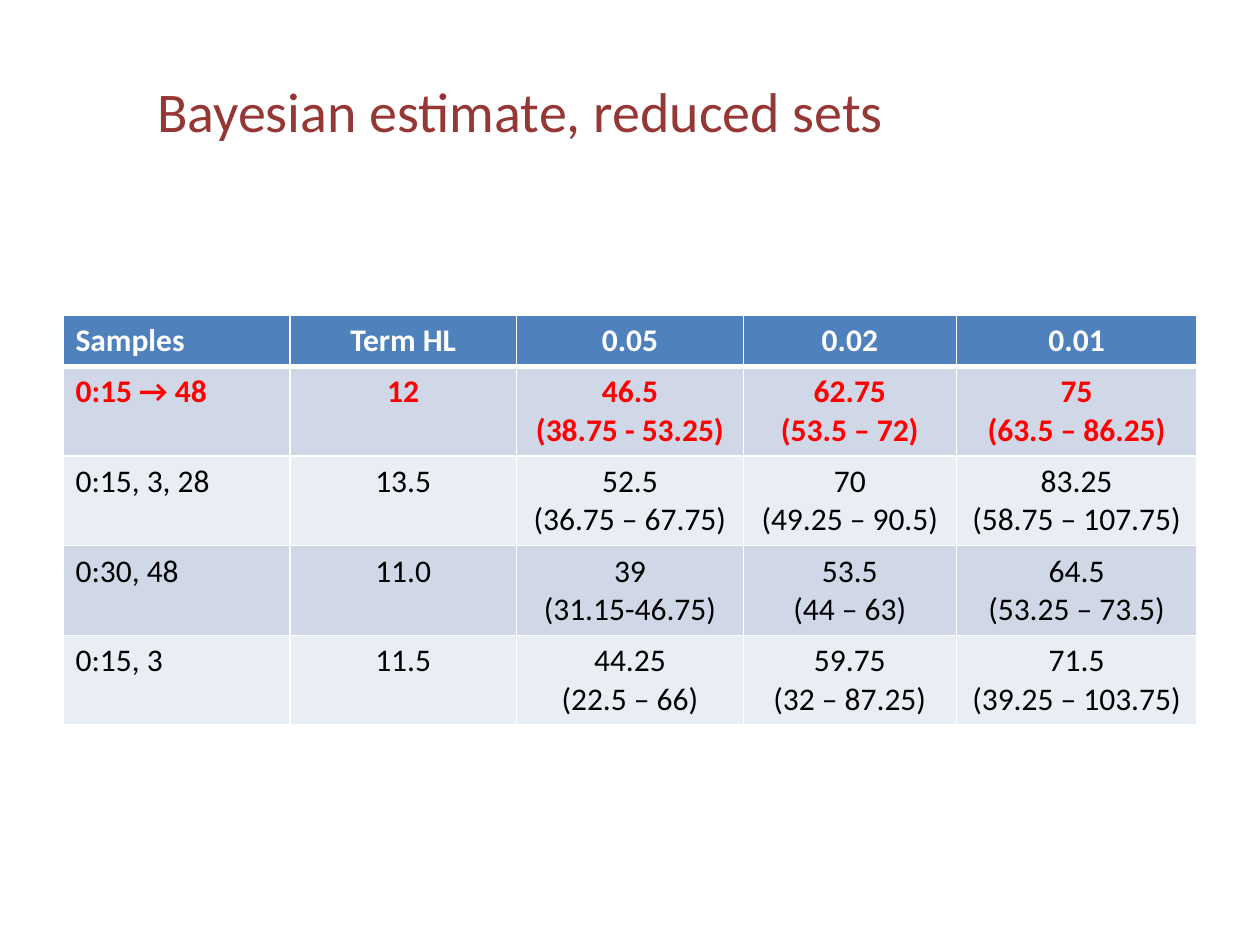
from lxml.etree import SubElement
from pptx import Presentation
from pptx.dml.color import RGBColor
from pptx.enum.text import MSO_ANCHOR, PP_ALIGN
from pptx.oxml.ns import qn
from pptx.util import Inches, Pt

WHITE = RGBColor(0xFF, 0xFF, 0xFF)
BLACK = RGBColor(0x00, 0x00, 0x00)
RED = RGBColor(0xFF, 0x00, 0x00)
MAROON = RGBColor(0x95, 0x37, 0x35)
HEADER = RGBColor(0x4F, 0x81, 0xBD)
BANDS = [RGBColor(0xE9, 0xED, 0xF4), RGBColor(0xD0, 0xD8, 0xE8)]


def write(tf, text, size=18, color=BLACK, bold=False, align=PP_ALIGN.CENTER):
    for i, line in enumerate(text.split("\n")):
        p = tf.paragraphs[0] if i == 0 else tf.add_paragraph()
        p.alignment = align
        r = p.add_run()
        r.text = line
        r.font.name = "Calibri"
        r.font.size = Pt(size)
        r.font.bold = bold
        r.font.color.rgb = color


def set_border(cell, side, width):
    ln = SubElement(cell._tc.get_or_add_tcPr(), qn(f"a:ln{side}"), w=str(Pt(width)))
    fill = SubElement(ln, qn("a:solidFill"))
    SubElement(fill, qn("a:srgbClr"), val=str(WHITE))


prs = Presentation()
prs.slide_width, prs.slide_height = Inches(10), Inches(7.5)
s = prs.slides.add_slide(prs.slide_layouts[5])

# Title
title = s.shapes.title
title.left, title.top = Inches(1.09), Inches(0.34)
title.width, title.height = Inches(6.08), Inches(1.06)
title.text_frame.vertical_anchor = MSO_ANCHOR.MIDDLE
write(title.text_frame, "Bayesian estimate, reduced sets", size=32, color=MAROON)

# Table of estimates with their ranges
rows = [
    ["Samples", "Term HL", "0.05", "0.02", "0.01"],
    ["0:15 → 48", "12", "46.5\n(38.75 - 53.25)", "62.75\n(53.5 – 72)", "75\n(63.5 – 86.25)"],
    ["0:15, 3, 28", "13.5", "52.5\n(36.75 – 67.75)", "70\n(49.25 – 90.5)", "83.25\n(58.75 – 107.75)"],
    ["0:30, 48", "11.0", "39\n(31.15-46.75)", "53.5\n(44 – 63)", "64.5\n(53.25 – 73.5)"],
    ["0:15, 3", "11.5", "44.25\n(22.5 – 66)", "59.75\n(32 – 87.25)", "71.5\n(39.25 – 103.75)"],
]
widths = [1.8, 1.8, 1.8, 1.69, 1.91]
table = s.shapes.add_table(len(rows), len(widths), Inches(0.5), Inches(2.5),
                           Inches(9), Inches(3.21)).table
for col, width in zip(table.columns, widths):
    col.width = Inches(width)

for i, row in enumerate(rows):
    table.rows[i].height = Inches(0.41 if i == 0 else 0.7)
    color = {0: WHITE, 1: RED}.get(i, BLACK)
    for j, text in enumerate(row):
        cell = table.cell(i, j)
        # The line under the header is heavier than the rest
        for side in "LRTB":
            heavy = (i, side) in [(0, "B"), (1, "T")]
            set_border(cell, side, 3 if heavy else 1)
        cell.fill.solid()
        cell.fill.fore_color.rgb = HEADER if i == 0 else BANDS[i % 2]
        write(cell.text_frame, text, color=color, bold=i < 2,
              align=PP_ALIGN.LEFT if j == 0 else PP_ALIGN.CENTER)

prs.save("out.pptx")
